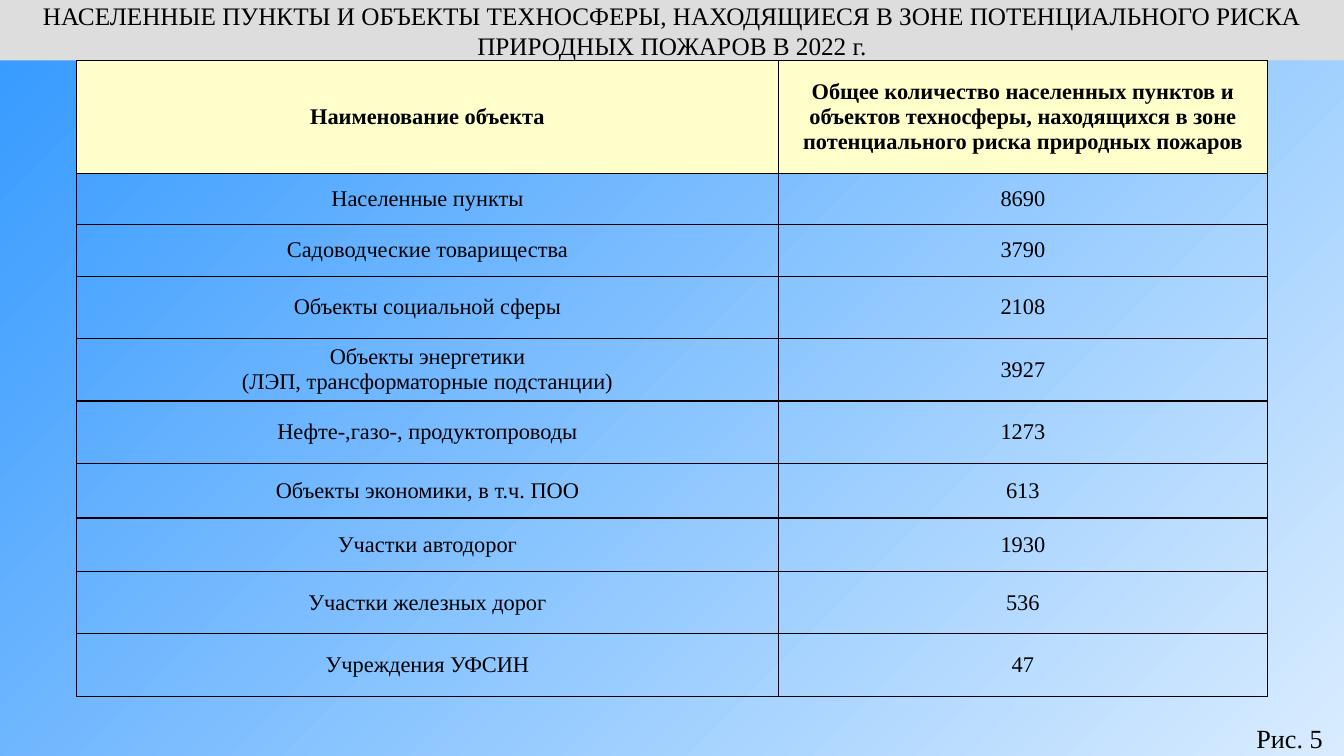
from lxml import etree
from pptx import Presentation
from pptx import util as u
from pptx.dml.color import RGBColor
from pptx.enum import shapes, text
from pptx.oxml.ns import qn

FONT = "Times New Roman"
BLACK = RGBColor(0x00, 0x00, 0x00)
BANNER_GRAY = RGBColor(0xDD, 0xDD, 0xDD)
HEADER_YELLOW = RGBColor(0xFF, 0xFF, 0xCC)
SKY_BLUE = RGBColor(0x33, 0x99, 0xFF)
PALE_BLUE = RGBColor(0xD9, 0xEC, 0xFF)

TITLE = (
    "НАСЕЛЕННЫЕ ПУНКТЫ И ОБЪЕКТЫ ТЕХНОСФЕРЫ, НАХОДЯЩИЕСЯ В ЗОНЕ ПОТЕНЦИАЛЬНОГО РИСКА\n"
    "ПРИРОДНЫХ ПОЖАРОВ В 2022 г."
)
HEADER = (
    "Наименование объекта",
    "Общее количество населенных пунктов и объектов техносферы, "
    "находящихся в зоне потенциального риска природных пожаров",
)
OBJECTS = [
    ("Населенные пункты", 8690),
    ("Садоводческие товарищества", 3790),
    ("Объекты социальной сферы", 2108),
    ("Объекты энергетики\n(ЛЭП, трансформаторные подстанции)", 3927),
    ("Нефте-,газо-, продуктопроводы", 1273),
    ("Объекты экономики, в т.ч. ПОО", 613),
    ("Участки автодорог", 1930),
    ("Участки железных дорог", 536),
    ("Учреждения УФСИН", 47),
]
COLUMN_WIDTHS = [6.96, 4.85]
ROW_HEIGHTS = [1.12, 0.51, 0.51, 0.62, 0.62, 0.62, 0.54, 0.53, 0.62, 0.62]


def set_background(slide):
    fill = slide.background.fill
    fill.gradient()
    fill.gradient_angle = 315
    for stop, position, color in zip(fill.gradient_stops, (0, 1), (SKY_BLUE, PALE_BLUE)):
        stop.position = position
        stop.color.rgb = color


def write_text(text_frame, content, size, alignment, bold=False):
    text_frame.text = content
    for paragraph in text_frame.paragraphs:
        paragraph.alignment = alignment
        for run in paragraph.runs:
            run.font.name = FONT
            run.font.size = u.Pt(size)
            run.font.bold = bold
            run.font.color.rgb = BLACK


def set_margins(target, horizontal, vertical):
    target.margin_left = target.margin_right = u.Inches(horizontal)
    target.margin_top = target.margin_bottom = u.Inches(vertical)


def add_banner(slide):
    banner = slide.shapes.add_shape(
        shapes.MSO_SHAPE.RECTANGLE, 0, 0, u.Inches(13.33), u.Inches(0.6))
    banner.shadow.inherit = False
    banner.fill.solid()
    banner.fill.fore_color.rgb = BANNER_GRAY
    banner.line.fill.background()
    set_margins(banner.text_frame, 0.12, 0.06)
    banner.text_frame.vertical_anchor = text.MSO_ANCHOR.MIDDLE
    write_text(banner.text_frame, TITLE, 18, text.PP_ALIGN.CENTER)


def set_borders(cell):
    """Draw a thin black line on all four sides; lines must precede the fill."""
    properties = cell._tc.get_or_add_tcPr()
    for index, side in enumerate(("lnL", "lnR", "lnT", "lnB")):
        line = etree.Element(qn(f"a:{side}"), w=str(u.Pt(1)))
        fill = etree.SubElement(line, qn("a:solidFill"))
        etree.SubElement(fill, qn("a:srgbClr"), val=str(BLACK))
        properties.insert(index, line)


def format_cell(cell, content, is_header, is_number):
    if is_header:
        cell.fill.solid()
        cell.fill.fore_color.rgb = HEADER_YELLOW
    else:
        cell.fill.background()
    set_borders(cell)
    cell.vertical_anchor = text.MSO_ANCHOR.MIDDLE
    if is_number:
        set_margins(cell, 0, 0)
    else:
        set_margins(cell, 0.1, 0.05)
    write_text(cell.text_frame, content, 16, text.PP_ALIGN.CENTER, is_header)


def add_objects_table(slide):
    rows = [HEADER, *OBJECTS]
    table = slide.shapes.add_table(
        len(rows), len(HEADER), u.Inches(0.76), u.Inches(0.6),
        u.Inches(sum(COLUMN_WIDTHS)), u.Inches(sum(ROW_HEIGHTS))).table
    table.first_row = table.horz_banding = False
    for column, width in zip(table.columns, COLUMN_WIDTHS):
        column.width = u.Inches(width)
    for row, height in zip(table.rows, ROW_HEIGHTS):
        row.height = u.Inches(height)
    for row_index, values in enumerate(rows):
        for column_index, value in enumerate(values):
            format_cell(table.cell(row_index, column_index), str(value),
                        row_index == 0, isinstance(value, int))


def add_figure_label(slide):
    label = slide.shapes.add_textbox(
        u.Inches(12.34), u.Inches(7.11), u.Inches(0.99), u.Inches(0.39))
    label.text_frame.word_wrap = False
    set_margins(label.text_frame, 0.12, 0.06)
    write_text(label.text_frame, "Рис. 5", 18.7, text.PP_ALIGN.LEFT)


def main():
    presentation = Presentation()
    presentation.slide_width = u.Inches(13.33)
    presentation.slide_height = u.Inches(7.5)
    slide = presentation.slides.add_slide(presentation.slide_layouts[6])
    set_background(slide)
    add_banner(slide)
    add_objects_table(slide)
    add_figure_label(slide)
    presentation.save("out.pptx")


if __name__ == "__main__":
    main()
